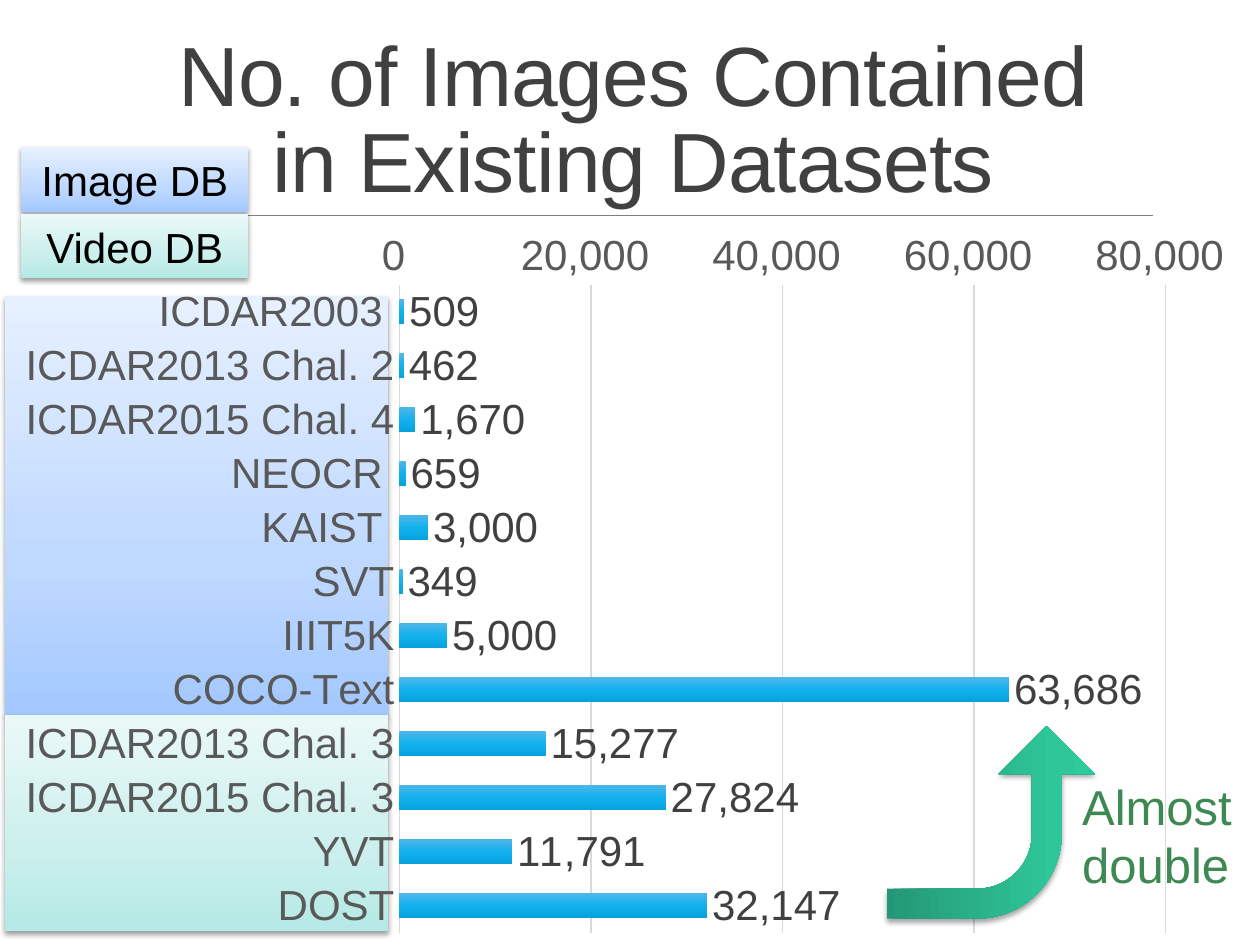
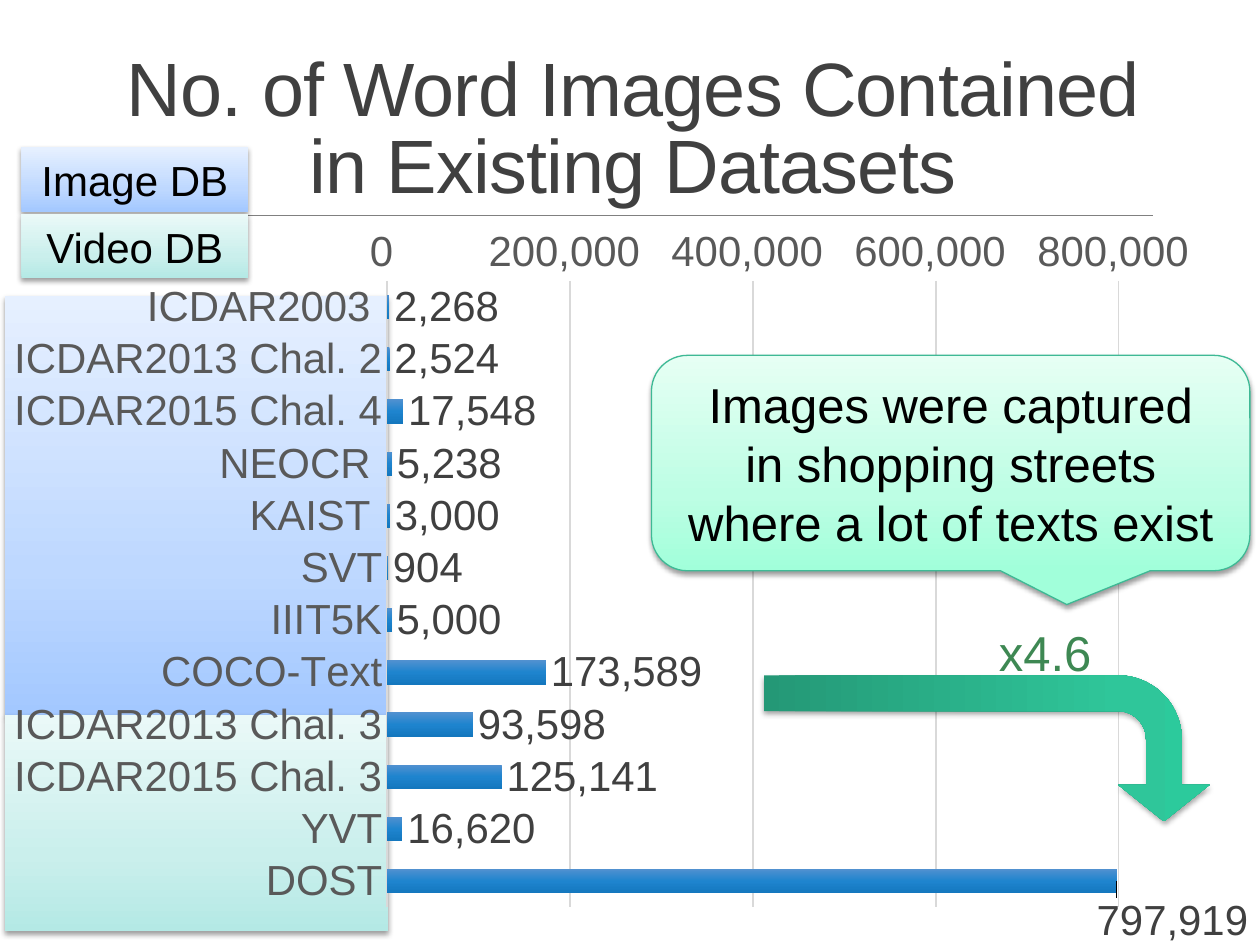
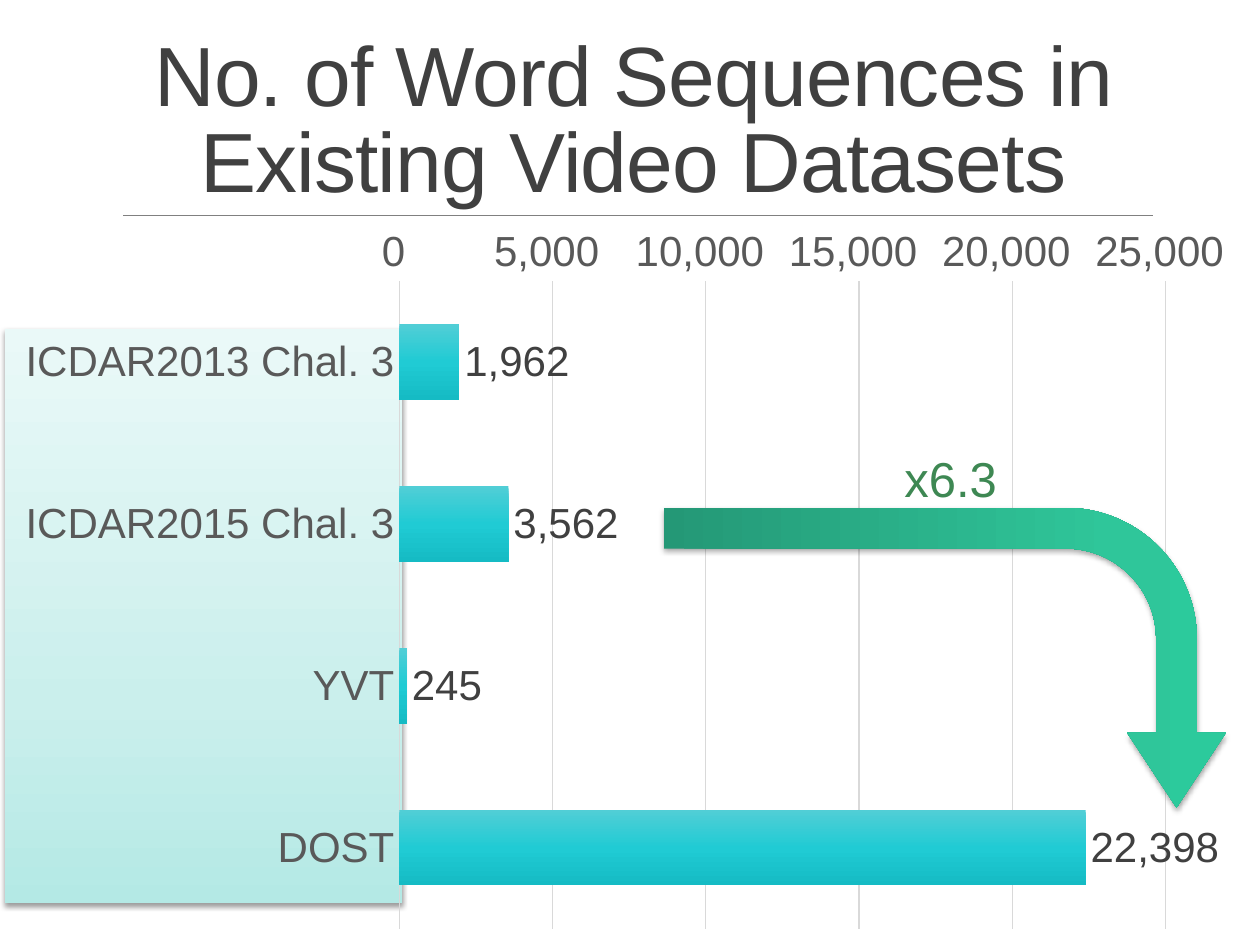
from lxml.etree import SubElement
from pptx import Presentation
from pptx.chart.data import CategoryChartData
from pptx.dml.color import RGBColor
from pptx.enum.chart import XL_CHART_TYPE, XL_LABEL_POSITION, XL_TICK_MARK
from pptx.enum.shapes import MSO_CONNECTOR, MSO_SHAPE
from pptx.enum.text import MSO_ANCHOR, MSO_AUTO_SIZE, PP_ALIGN
from pptx.oxml import parse_xml
from pptx.oxml.ns import nsdecls, qn
from pptx.util import Inches, Pt

COLS, ROWS = 100, 75
WIDTH, HEIGHT = Inches(10), Inches(7.5)
FONT = "Arial"
NUMBER = "#,##0_ "

BLACK = RGBColor(0x00, 0x00, 0x00)
TITLE = RGBColor(0x40, 0x40, 0x40)
RULE = RGBColor(0x80, 0x80, 0x80)
AXIS_TEXT = RGBColor(0x59, 0x59, 0x59)
GRID = RGBColor(0xD9, 0xD9, 0xD9)
NOTE = RGBColor(0x3E, 0x88, 0x53)
CALLOUT_LINE = RGBColor(0x3E, 0xB9, 0x95)


def ramp(middle, *colors):
    return list(zip((0, middle, 100), map(RGBColor.from_string, colors)))


IMAGE_FILL = ramp(35, "A3C8FF", "BED8FF", "E6F0FF")
VIDEO_FILL = ramp(35, "B4E9E5", "CAEFEC", "EAF9F8")
CALLOUT_FILL = ramp(35, "A1FFDA", "BDFEE4", "E6FFF4")
ARROW_FILL = ramp(80, "249876", "2FC69A", "2CCA9C")
SKY_BARS = ramp(50, "4FB6E9", "12B1EE", "06A2DD")
BLUE_BARS = ramp(50, "5191D0", "1E84CE", "1477BE")
TEAL_BARS = ramp(50, "51CED6", "20CBD4", "15BBC4")

IMAGE_SETS = ["ICDAR2003 ", "ICDAR2013 Chal. 2", "ICDAR2015 Chal. 4", "NEOCR ",
              "KAIST ", "SVT", "IIIT5K", "COCO-Text"]
VIDEO_SETS = ["ICDAR2013 Chal. 3", "ICDAR2015 Chal. 3", "YVT", "DOST"]

TITLE_BOX = (9, 1.2, 82.5, 15.9)
CHART_BOX = (0, 17.1, 100, 57.9)
LEGEND_BOX = (1.7, 11.7, 18, 10.4)
PANEL_BOX = (0.4, 23.5, 30.4, 50.4)
PLOT = (0.317, 0.09, 0.608, 0.888)


def emu(box):
    x, y, w, h = box
    return (int(WIDTH * x / COLS), int(HEIGHT * y / ROWS),
            int(WIDTH * w / COLS), int(HEIGHT * h / ROWS))


def style_font(font, size, color):
    font.name, font.size = FONT, Pt(size)
    font.color.rgb = color


def fill_gradient(fill, element, stops, angle):
    fill.gradient()
    fill.gradient_angle = angle
    gs_list = element.find(".//" + qn("a:gsLst"))
    gs_list.clear()
    for position, color in stops:
        gs = SubElement(gs_list, qn("a:gs"), pos=str(position * 1000))
        SubElement(gs, qn("a:srgbClr"), val=str(color))


def write(sp, text, size, color, align=PP_ALIGN.CENTER, anchor=MSO_ANCHOR.MIDDLE):
    tf = sp.text_frame
    tf.word_wrap = True
    tf.vertical_anchor = anchor
    p = tf.paragraphs[0]
    p.text = text
    p.alignment = align
    style_font(p.font, size, color)
    return p


def add_raised(s, kind, box, stops, opacity=38, distance=1.6):
    sp = s.shapes.add_shape(kind, *emu(box))
    fill_gradient(sp.fill, sp._element, stops, 90)
    sp.line.fill.background()
    sp.shadow.inherit = False
    effects = sp._element.spPr.find(qn("a:effectLst"))
    shadow = SubElement(effects, qn("a:outerShdw"), blurRad=str(Pt(3.1)),
                        dist=str(Pt(distance)), dir="5400000", rotWithShape="0")
    color = SubElement(shadow, qn("a:srgbClr"), val=str(BLACK))
    SubElement(color, qn("a:alpha"), val=str(opacity * 1000))
    return sp


def add_title(s, box, text, size):
    x, y, w, h = emu(box)
    rule = s.shapes.add_connector(MSO_CONNECTOR.STRAIGHT, Inches(0.98), y + h, x + w, y + h)
    rule.line.color.rgb = RULE
    rule.line.width = Pt(0.5)
    SubElement(rule._element.spPr, qn("a:effectLst"))
    sp = s.shapes.add_textbox(x, y, w, h)
    p = write(sp, text, size, TITLE, anchor=MSO_ANCHOR.BOTTOM)
    p.line_spacing = 0.85
    p._p.get_or_add_pPr().get_or_add_defRPr().set("spc", "-50")


def add_stack(s, box, tiles, gap=0):
    x, y, w, h = box
    room = h - gap * (len(tiles) - 1)
    for stops, share, label in tiles:
        sp = add_raised(s, MSO_SHAPE.RECTANGLE, (x, y, w, room * share), stops)
        if label:
            write(sp, label, 24, BLACK)
        y += room * share + gap


def add_panels(s):
    add_stack(s, PANEL_BOX, [(IMAGE_FILL, 0.66, ""), (VIDEO_FILL, 0.34, "")])


def add_legend(s):
    add_stack(s, LEGEND_BOX, [(IMAGE_FILL, 0.5, "Image DB"),
                              (VIDEO_FILL, 0.5, "Video DB")], gap=0.2)


def layout_xml(mode, **values):
    items = "".join(f'<c:{key} val="{value}"/>' for key, value in values.items())
    return parse_xml(f'<c:layout {nsdecls("c")}><c:manualLayout>{mode}{items}'
                     '</c:manualLayout></c:layout>')


def place_plot(chart, plot):
    x, y, w, h = plot
    area = chart._chartSpace.chart.plotArea
    old = area.find(qn("c:layout"))
    if old is not None:
        area.remove(old)
    mode = '<c:layoutTarget val="inner"/><c:xMode val="edge"/><c:yMode val="edge"/>'
    area.insert(0, layout_xml(mode, x=x, y=y, w=w, h=h))


def add_bars(s, box, names, values, stops, top, step, plot=PLOT):
    data = CategoryChartData(number_format=NUMBER)
    data.categories = names
    data.add_series("Series 1", values)
    chart = s.shapes.add_chart(XL_CHART_TYPE.BAR_CLUSTERED, *emu(box), data).chart
    chart.has_legend = chart.has_title = False
    style_font(chart.font, 24, BLACK)
    place_plot(chart, plot)

    for axis in (chart.category_axis, chart.value_axis):
        axis.major_tick_mark = axis.minor_tick_mark = XL_TICK_MARK.NONE
        style_font(axis.tick_labels.font, 24, AXIS_TEXT)
    names_axis, axis = chart.category_axis, chart.value_axis
    names_axis.reverse_order = True
    names_axis.format.line.color.rgb = GRID
    names_axis.format.line.width = Pt(1)
    axis.minimum_scale, axis.maximum_scale, axis.major_unit = 0, top, step
    axis.format.line.fill.background()
    axis.major_gridlines.format.line.color.rgb = GRID
    axis.major_gridlines.format.line.width = Pt(0.75)

    bars = chart.plots[0]
    bars.gap_width, bars.overlap, bars.vary_by_categories = 115, -20, False
    series = bars.series[0]
    fill_gradient(series.format.fill, series._element, stops, 270)
    labels = series.data_labels
    labels.show_value = True
    labels.position = XL_LABEL_POSITION.OUTSIDE_END
    style_font(labels.font, 24, TITLE)
    for numbers in (labels, axis.tick_labels):
        numbers.number_format = NUMBER
        numbers.number_format_is_linked = False
    return series


def move_label(series, index, dx, dy):
    label = series.points[index].data_label
    style_font(label.font, 24, TITLE)
    label.position = XL_LABEL_POSITION.OUTSIDE_END
    idx = series._element.find(f".//{qn('c:dLbl')}/{qn('c:idx')}")
    idx.addnext(layout_xml("", x=dx, y=dy))


def add_growth(s, arrow_box, bends, note_box, note, flip=False):
    sp = add_raised(s, MSO_SHAPE.BENT_ARROW, arrow_box, ARROW_FILL, 35, 1.8)
    for i, bend in enumerate((*bends, 0.25, 0.438)):
        sp.adjustments[i] = bend
    sp.rotation = 90
    if flip:
        sp._element.spPr.find(qn("a:xfrm")).set("flipH", "1")
    tb = s.shapes.add_textbox(*emu(note_box))
    write(tb, note, 28, NOTE, PP_ALIGN.LEFT, MSO_ANCHOR.TOP)
    tb.text_frame.auto_size = MSO_AUTO_SIZE.SHAPE_TO_FIT_TEXT


def add_callout(s, box, text):
    sp = add_raised(s, MSO_SHAPE.ROUNDED_RECTANGULAR_CALLOUT, box, CALLOUT_FILL)
    for i, value in enumerate((0.194, 0.657, 0.167)):
        sp.adjustments[i] = value
    sp.line.color.rgb = CALLOUT_LINE
    sp.line.width = Pt(0.75)
    write(sp, text, 28, BLACK)


def images_slide(s):
    add_panels(s)
    add_bars(s, (0, 17.4, 100, 57.9), IMAGE_SETS + VIDEO_SETS,
             [509, 462, 1670, 659, 3000, 349, 5000, 63686, 15277, 27824, 11791, 32147],
             SKY_BARS, 80000, 20000)
    add_title(s, TITLE_BOX, "No. of Images Contained\nin Existing Datasets", 48)
    add_legend(s)
    add_growth(s, (71, 57, 15.3, 16.5), (0.155, 0.25),
               (84.9, 61.1, 15.1, 10.4), "Almost\ndouble", flip=True)


def word_images_slide(s):
    add_panels(s)
    add_title(s, TITLE_BOX, "No. of Word Images Contained\nin Existing Datasets", 43.2)
    series = add_bars(
        s, CHART_BOX, IMAGE_SETS + VIDEO_SETS,
        [2268, 2524, 17548, 5238, 3000, 904, 5000, 173589, 93598, 125141, 16620, 797919],
        BLUE_BARS, 800000, 200000, (0.308, 0.09, 0.582, 0.86))
    move_label(series, 11, -0.02, 0.055)
    add_legend(s)
    add_growth(s, (72.5, 41.7, 11.6, 35.4), (0.245, 0.313),
               (78.3, 48.9, 15.1, 5.7), "x4.6")
    add_callout(s, (51.7, 28.2, 47.5, 17.1),
                "Images were captured\nin shopping streets\nwhere a lot of texts exist")


def sequences_slide(s):
    add_stack(s, (0.4, 26.1, 31.5, 45.6), [(VIDEO_FILL, 1, "")])
    add_title(s, TITLE_BOX, "No. of Word Sequences in Existing Video Datasets", 48)
    add_bars(s, CHART_BOX, VIDEO_SETS, [1962, 3562, 245, 22398], TEAL_BARS, 25000, 5000)
    add_growth(s, (63.1, 29.9, 23.8, 44.6), (0.136, 0.165),
               (70.8, 35.1, 9.4, 5.7), "x6.3")


def main():
    prs = Presentation()
    prs.slide_width, prs.slide_height = WIDTH, HEIGHT
    for build in (images_slide, word_images_slide, sequences_slide):
        build(prs.slides.add_slide(prs.slide_layouts[6]))
    prs.save("out.pptx")


if __name__ == "__main__":
    main()
